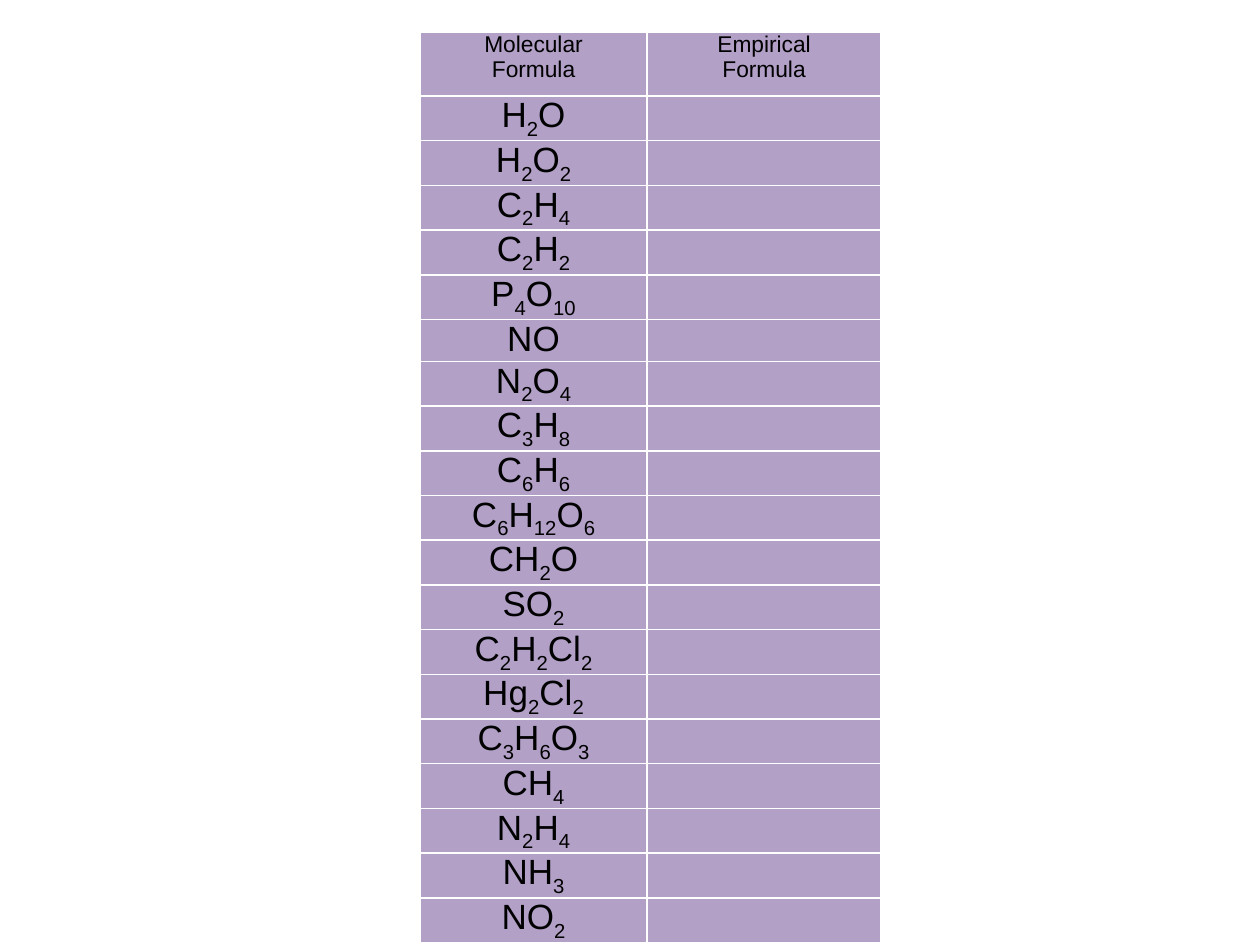
from itertools import groupby

from lxml.etree import SubElement
from pptx import Presentation
from pptx.dml.color import RGBColor
from pptx.enum.text import PP_ALIGN
from pptx.oxml.ns import qn
from pptx.util import Pt

SCALE = 914400 / 126  # EMU per px
FILL, LINE, INK = "B2A0C7", "FFFFFF", "000000"
COLUMN_WIDTHS = [227, 234]
HEADER_HEIGHT, ROW_HEIGHT = 64, 42
HEADERS = [["Molecular", "Formula"], ["Empirical", "Formula"]]
FORMULAS = ["H2O", "H2O2", "C2H4", "C2H2", "P4O10", "NO", "N2O4", "C3H8",
            "C6H6", "C6H12O6", "CH2O", "SO2", "C2H2Cl2", "Hg2Cl2", "C3H6O3",
            "CH4", "N2H4", "NH3", "NO2"]


def px(n):
    return round(n * SCALE)


def color(value):
    return RGBColor.from_string(value)


def add_run(p, text, size):
    r = p.add_run()
    r.text = text
    for name, value in {"name": "Arial", "size": Pt(size)}.items():
        setattr(r.font, name, value)
    r.font.color.rgb = color(INK)
    return r


def add_formula(p, formula):
    """Write a chemical formula with its digits as subscripts."""
    for is_digit, chars in groupby(formula, str.isdigit):
        r = add_run(p, "".join(chars), 20)
        if is_digit:
            r.font._element.set("baseline", "-25000")


def add_header(tf, lines):
    for i, line in enumerate(lines):
        p = tf.add_paragraph() if i else tf.paragraphs[0]
        p.alignment = PP_ALIGN.CENTER
        add_run(p, line, 13)


def style_cell(cell):
    margins = {"margin_left": px(5), "margin_right": px(5),
               "margin_top": 0, "margin_bottom": 0}
    for name, value in margins.items():
        setattr(cell, name, value)
    # Borders come before the fill in the cell properties
    tc_pr = cell._tc.get_or_add_tcPr()
    for side in ("a:lnL", "a:lnR", "a:lnT", "a:lnB"):
        ln = SubElement(tc_pr, qn(side), w=str(Pt(1)))
        fill = SubElement(ln, qn("a:solidFill"))
        SubElement(fill, qn("a:srgbClr"), val=LINE)
    cell.fill.solid()
    cell.fill.fore_color.rgb = color(FILL)


def add_formula_table(slide):
    heights = [HEADER_HEIGHT] + [ROW_HEIGHT] * len(FORMULAS)
    table = slide.shapes.add_table(
        len(heights), len(COLUMN_WIDTHS), px(420), px(32),
        px(sum(COLUMN_WIDTHS)), px(sum(heights))).table
    table.first_row = table.horz_banding = False
    for column, width in zip(table.columns, COLUMN_WIDTHS):
        column.width = px(width)
    for row, height in zip(table.rows, heights):
        row.height = px(height)
    for cell in table.iter_cells():
        style_cell(cell)

    # Header row
    for i, lines in enumerate(HEADERS):
        add_header(table.cell(0, i).text_frame, lines)

    # Molecular formulas; the empirical column stays empty to be filled in
    for i, formula in enumerate(FORMULAS, start=1):
        p = table.cell(i, 0).text_frame.paragraphs[0]
        p.alignment = PP_ALIGN.CENTER
        add_formula(p, formula)


def main():
    prs = Presentation()
    prs.slide_width, prs.slide_height = px(1260), px(945)
    s = prs.slides.add_slide(prs.slide_layouts[6])
    add_formula_table(s)
    prs.save("out.pptx")


if __name__ == "__main__":
    main()
